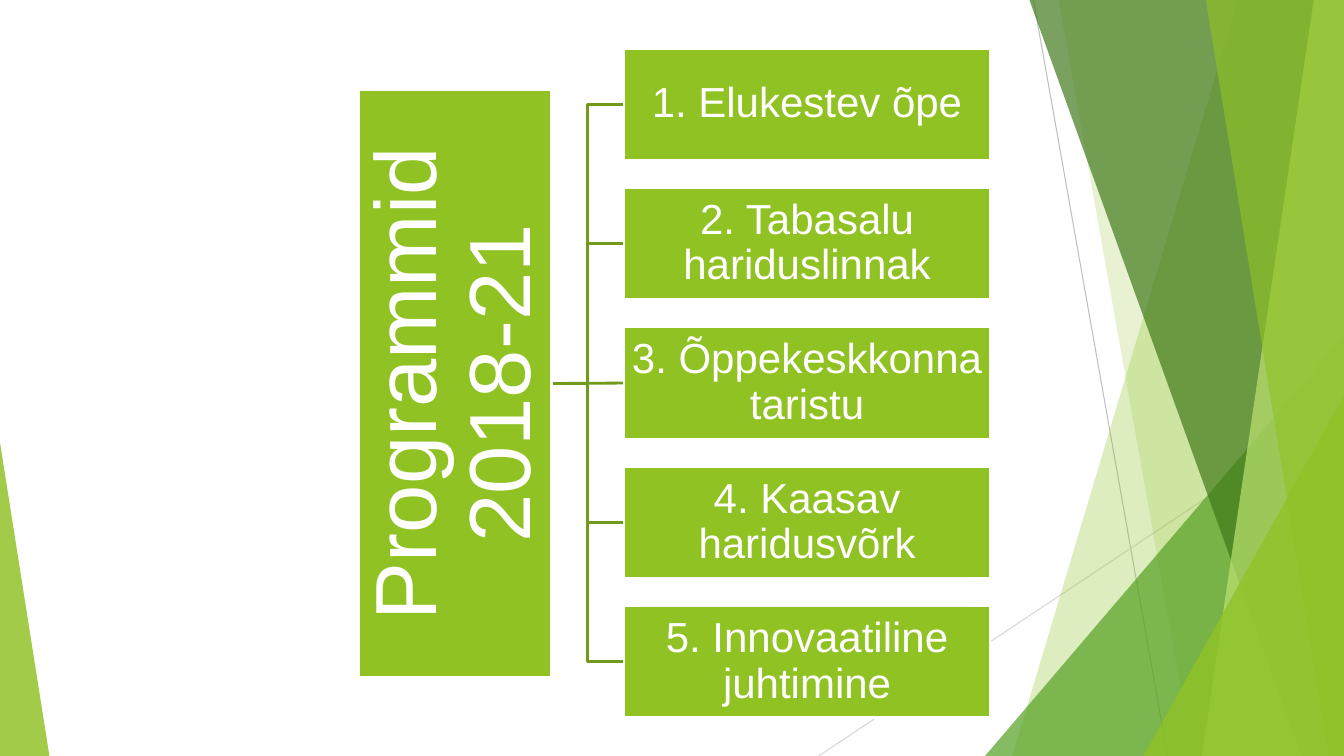
from lxml import etree
from pptx import Presentation
from pptx.dml.color import RGBColor
from pptx.enum.shapes import MSO_CONNECTOR, MSO_SHAPE
from pptx.enum.text import MSO_ANCHOR, PP_ALIGN
from pptx.oxml.ns import qn
from pptx.util import Inches, Pt

LEAF = "90C226"
BOX_GREEN = "90C223"
BRANCH_GREEN = "71991B"
WHITE = "FFFFFF"
WIDTH, HEIGHT = 13.33, 7.5

# Thin lines: start, end, colour
RAYS = [
    ((10.25, 0), (11.58, HEIGHT), "BFBFBF"),
    ((WIDTH, 4.03), (8.12, HEIGHT), "D8D8D8"),
]
# Bands to the right edge: top x, bottom x, colour, opacity in percent
BACK_BANDS = [(12.28, 10.04, LEAF, 29), (10.5, 11.83, LEAF, 20)]
FRONT_BANDS = [
    (10.21, 12.91, "3F7818", 69),
    (13.03, 11.92, "BFE471", 69),
    (11.96, 13.18, LEAF, 64),
]

PROGRAMMES = [
    "1. Elukestev õpe",
    "2. Tabasalu hariduslinnak",
    "3. Õppekeskkonna taristu",
    "4. Kaasav haridusvõrk",
    "5. Innovaatiline juhtimine",
]
ROOT_LEFT, ROOT_TOP, ROOT_WIDTH, ROOT_HEIGHT = 3.56, 0.89, 1.91, 5.83
ROOT_RIGHT, ROOT_MIDDLE = ROOT_LEFT + ROOT_WIDTH, ROOT_TOP + ROOT_HEIGHT / 2
BOX_LEFT, BOX_TOP, BOX_WIDTH, BOX_HEIGHT = 6.19, 0.48, 3.63, 1.11
BOX_STEP = 1.3825


def rgb(colour):
    return RGBColor.from_string(colour)


def paint(shape, colour, opacity=100):
    """Flat fill without outline or shadow."""
    shape.shadow.inherit = False
    shape.line.fill.background()
    shape.fill.solid()
    shape.fill.fore_color.rgb = rgb(colour)
    if opacity < 100:
        tint = shape.fill._xPr.find(qn("a:solidFill"))[0]
        etree.SubElement(tint, qn("a:alpha"), val=str(opacity * 1000))


def add_line(slide, kind, start, end, colour, width):
    line = slide.shapes.add_connector(
        kind, *(Inches(value) for value in (*start, *end)))
    line.line.color.rgb = rgb(colour)
    line.line.width = Pt(width)
    etree.SubElement(line._element.spPr, qn("a:effectLst"))
    return line


def add_band(slide, top_x, bottom_x, colour, opacity):
    corners = [(top_x, 0), (WIDTH, 0), (WIDTH, HEIGHT), (bottom_x, HEIGHT)]
    points = [(Inches(x), Inches(y)) for x, y in corners]
    outline = slide.shapes.build_freeform(*points[0])
    outline.add_line_segments(points[1:], close=True)
    paint(outline.convert_to_shape(), colour, opacity)


def add_triangle(slide, left, top, width, apex, colour, opacity):
    triangle = slide.shapes.add_shape(
        MSO_SHAPE.ISOSCELES_TRIANGLE, Inches(left), Inches(top),
        Inches(width), Inches(HEIGHT - top))
    triangle.adjustments[0] = apex
    paint(triangle, colour, opacity)


def add_box(slide, left, top, width, height, label, size, inset):
    box = slide.shapes.add_shape(
        MSO_SHAPE.RECTANGLE, Inches(left), Inches(top),
        Inches(width), Inches(height))
    paint(box, BOX_GREEN)
    box.line.color.rgb = rgb(WHITE)
    box.line.width = Pt(2)

    frame = box.text_frame
    frame.word_wrap = True
    frame.vertical_anchor = MSO_ANCHOR.MIDDLE
    frame.margin_left = frame.margin_right = Inches(inset)
    frame.margin_top = frame.margin_bottom = Inches(inset)
    paragraph = frame.paragraphs[0]
    paragraph.alignment = PP_ALIGN.CENTER
    paragraph.line_spacing = 0.9
    run = paragraph.add_run()
    run.text = label
    run.font.name = "Arial"
    run.font.size = Pt(size)
    run.font.color.rgb = rgb(WHITE)
    return box


def add_branch(slide, box_top):
    """Line from the root to a programme box; straight when level."""
    middle = box_top + BOX_HEIGHT / 2
    level = abs(middle - ROOT_MIDDLE) < 0.02
    kind = MSO_CONNECTOR.STRAIGHT if level else MSO_CONNECTOR.ELBOW
    return add_line(slide, kind, (ROOT_RIGHT, ROOT_MIDDLE),
                    (BOX_LEFT, middle), BRANCH_GREEN, 2)


def add_backdrop(slide):
    for start, end, colour in RAYS:
        add_line(slide, MSO_CONNECTOR.STRAIGHT, start, end, colour, 0.75)
    for band in BACK_BANDS:
        add_band(slide, *band)
    add_triangle(slide, 9.77, 3.33, 3.56, 1, "54A021", 71)
    for band in FRONT_BANDS:
        add_band(slide, *band)
    add_triangle(slide, 11.34, 3.93, 1.99, 1, LEAF, 80)
    add_triangle(slide, 0, 4.39, 0.49, 0, LEAF, 84)


def add_programme_tree(slide):
    # Branches lie behind the boxes and are joined once those exist
    tops = [BOX_TOP + i * BOX_STEP for i in range(len(PROGRAMMES))]
    branches = [add_branch(slide, top) for top in tops]

    root = add_box(slide, ROOT_LEFT, ROOT_TOP, ROOT_WIDTH, ROOT_HEIGHT,
                   "Programmid 2018-21", 62, 0.04)
    root.text_frame._txBody.bodyPr.set("vert", "vert270")

    for label, top, branch in zip(PROGRAMMES, tops, branches):
        programme = add_box(slide, BOX_LEFT, top, BOX_WIDTH, BOX_HEIGHT,
                            label, 30, 0.02)
        branch.begin_connect(root, 3)
        branch.end_connect(programme, 1)


def main():
    prs = Presentation()
    prs.slide_width, prs.slide_height = Inches(WIDTH), Inches(HEIGHT)
    slide = prs.slides.add_slide(prs.slide_layouts[6])
    add_backdrop(slide)
    add_programme_tree(slide)
    prs.save("out.pptx")


if __name__ == "__main__":
    main()
